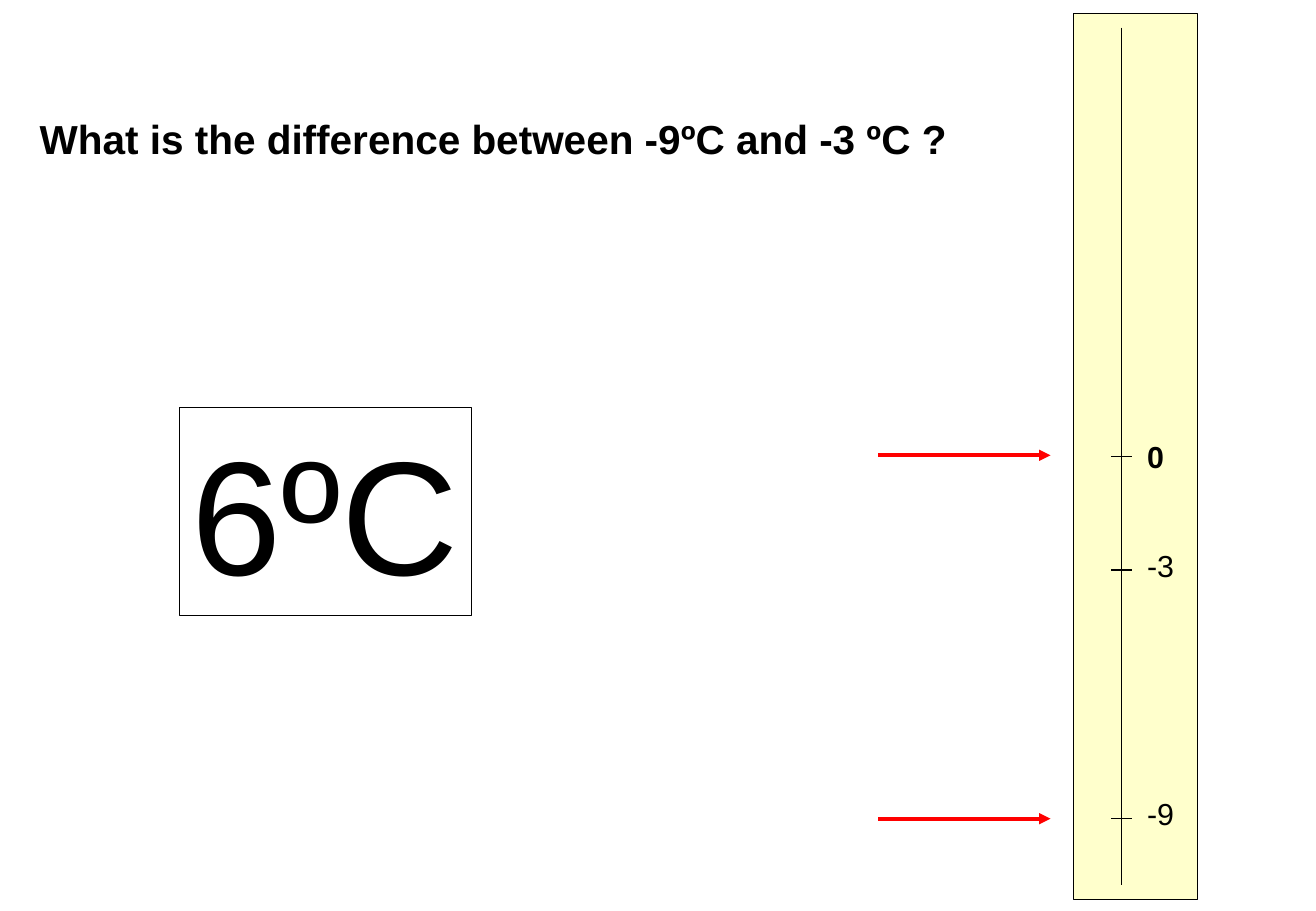
from lxml.etree import SubElement
from pptx import Presentation
from pptx.dml.color import RGBColor
from pptx.enum.shapes import MSO_CONNECTOR, MSO_SHAPE
from pptx.enum.text import MSO_ANCHOR
from pptx.oxml.ns import qn
from pptx.util import Cm, Pt

COLOURS = {"ink": "000000", "scale": "FFFFCC", "arrow": "FF0000"}


class Page:
    """A slide with the style of its text, boxes and lines."""

    font = "Arial"

    def __init__(self, deck):
        self.shapes = deck.slides.add_slide(deck.slide_layouts[6]).shapes

    def colour(self, name):
        return RGBColor.from_string(COLOURS[name])

    def text(self, words, left, top, width, height, size, bold=False):
        box = self.shapes.add_textbox(Cm(left), Cm(top), Cm(width), Cm(height))
        frame = box.text_frame
        frame.word_wrap = False
        frame.vertical_anchor = MSO_ANCHOR.BOTTOM
        para = frame.paragraphs[0]
        para.text = words
        para.font.name = self.font
        para.font.size = Pt(size)
        para.font.bold = bold
        para.font.color.rgb = self.colour("ink")
        return box

    def outline(self, shape, colour="ink", weight=0.75):
        shape.line.color.rgb = self.colour(colour)
        shape.line.width = Pt(weight)

    def rectangle(self, left, top, width, height, fill):
        shape = self.shapes.add_shape(
            MSO_SHAPE.RECTANGLE, Cm(left), Cm(top), Cm(width), Cm(height))
        shape.shadow.inherit = False
        shape.fill.solid()
        shape.fill.fore_color.rgb = self.colour(fill)
        self.outline(shape)

    def line(self, x1, y1, x2, y2, colour="ink", weight=0.75):
        line = self.shapes.add_connector(
            MSO_CONNECTOR.STRAIGHT, Cm(x1), Cm(y1), Cm(x2), Cm(y2))
        self.outline(line, colour, weight)
        SubElement(line._element.spPr, qn("a:effectLst"))
        return line

    def arrow(self, x1, x2, y):
        line = self.line(x1, y, x2, y, "arrow", 2.25)
        SubElement(line.line._get_or_add_ln(), qn("a:tailEnd"), type="triangle")


def main():
    deck = Presentation()
    deck.slide_width, deck.slide_height = Cm(27.51), Cm(19.05)
    page = Page(deck)

    page.text("What is the difference between -9ºC and -3 ºC ?",
              0.58, 2.26, 19.7, 1.27, 24, bold=True)

    page.rectangle(22.44, 0.28, 2.6, 18.53, "scale")
    page.line(23.45, 0.58, 23.45, 18.51)
    marks = [("0", 9.55, 9.03, 0.86), ("-3", 11.92, 11.31, 1.07),
             ("-9", 17.12, 16.49, 1.07)]
    for label, tick, top, width in marks:
        page.line(23.23, tick, 23.67, tick)
        page.text(label, 23.73, top, width, 1.02, 18, bold=label == "0")

    for y in (17.12, 9.52):
        page.arrow(18.36, 21.96, y)

    answer = page.text("6ºC", 3.76, 8.53, 6.1, 4.34, 96)
    answer.text_frame.margin_bottom = Cm(0.15)
    page.outline(answer)

    deck.save("out.pptx")


if __name__ == "__main__":
    main()
